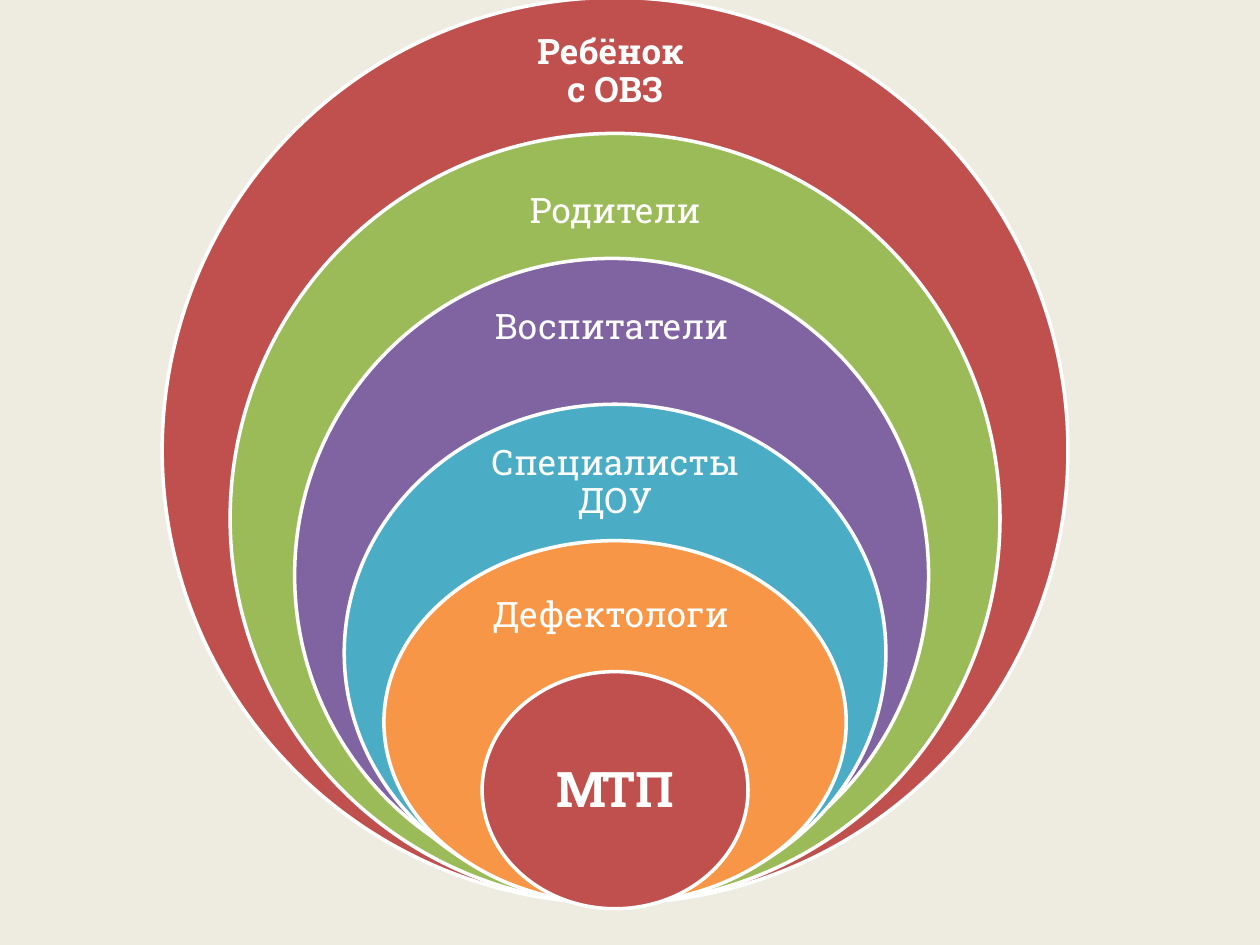
from dataclasses import dataclass

from pptx import Presentation
from pptx.dml.color import RGBColor
from pptx.enum import shapes, text
from pptx.util import Cm, Pt


@dataclass(frozen=True)
class Theme:
    font: str = "Roboto Slab"
    back: str = "EEECE1"
    white: str = "FFFFFF"
    red: str = "C0504D"
    green: str = "9BBB59"
    purple: str = "8064A2"
    blue: str = "4BACC6"
    orange: str = "F79646"
    body: int = 20
    core: int = 28
    edge: int = 2


@dataclass(frozen=True)
class Ring:
    label: str
    fill: str
    top: float
    width: float
    height: float
    middle: float
    span: float
    size: int = Theme.body
    bold: bool = False
    center: float = 12.4


THEME = Theme()
BOX = 1.8
INSET = 0.41
RINGS = (
    Ring("Ребёнок \nс ОВЗ", THEME.red, -0.05, 18.26, 18.26, 1.45, 6.86, bold=True),
    Ring("Родители", THEME.green, 2.69, 15.52, 15.52, 4.27, 6.68),
    Ring("Воспитатели", THEME.purple, 5.21, 12.78, 12.78, 6.62, 6.6, center=12.33),
    Ring("Специалисты ДОУ", THEME.blue, 8.15, 10.92, 10.03, 9.74, 5.9),
    Ring("Дефектологи ", THEME.orange, 10.9, 9.32, 7.32, 12.43, 6.07),
    Ring("МТП", THEME.red, 13.54, 5.36, 4.78, 15.95, 3.78, THEME.core, True),
)


def color(code: str) -> RGBColor:
    return RGBColor.from_string(code)


def draw_oval(slide, ring: Ring) -> None:
    oval = slide.shapes.add_shape(
        shapes.MSO_SHAPE.OVAL,
        Cm(ring.center - ring.width / 2), Cm(ring.top),
        Cm(ring.width), Cm(ring.height),
    )
    oval.shadow.inherit = False
    oval.fill.solid()
    oval.fill.fore_color.rgb = color(ring.fill)
    oval.line.color.rgb = color(THEME.white)
    oval.line.width = Pt(THEME.edge)


def draw_label(slide, ring: Ring) -> None:
    box = slide.shapes.add_textbox(
        Cm(ring.center - ring.span / 2), Cm(ring.middle - BOX / 2),
        Cm(ring.span), Cm(BOX),
    )
    frame = box.text_frame
    frame.word_wrap = True
    frame.vertical_anchor = text.MSO_ANCHOR.MIDDLE
    frame.margin_left = frame.margin_right = Cm(INSET)
    frame.margin_top = frame.margin_bottom = 0
    frame.text = ring.label
    for line in frame.paragraphs:
        line.alignment = text.PP_ALIGN.CENTER
        line.line_spacing = 0.9
        line.font.name = THEME.font
        line.font.size = Pt(ring.size)
        line.font.bold = ring.bold
        line.font.color.rgb = color(THEME.white)


def main() -> None:
    deck = Presentation()
    deck.slide_width, deck.slide_height = Cm(25.4), Cm(19.05)
    slide = deck.slides.add_slide(deck.slide_layouts[6])
    slide.background.fill.solid()
    slide.background.fill.fore_color.rgb = color(THEME.back)
    for ring in RINGS:
        draw_oval(slide, ring)
        draw_label(slide, ring)
    deck.save("out.pptx")


if __name__ == "__main__":
    main()
